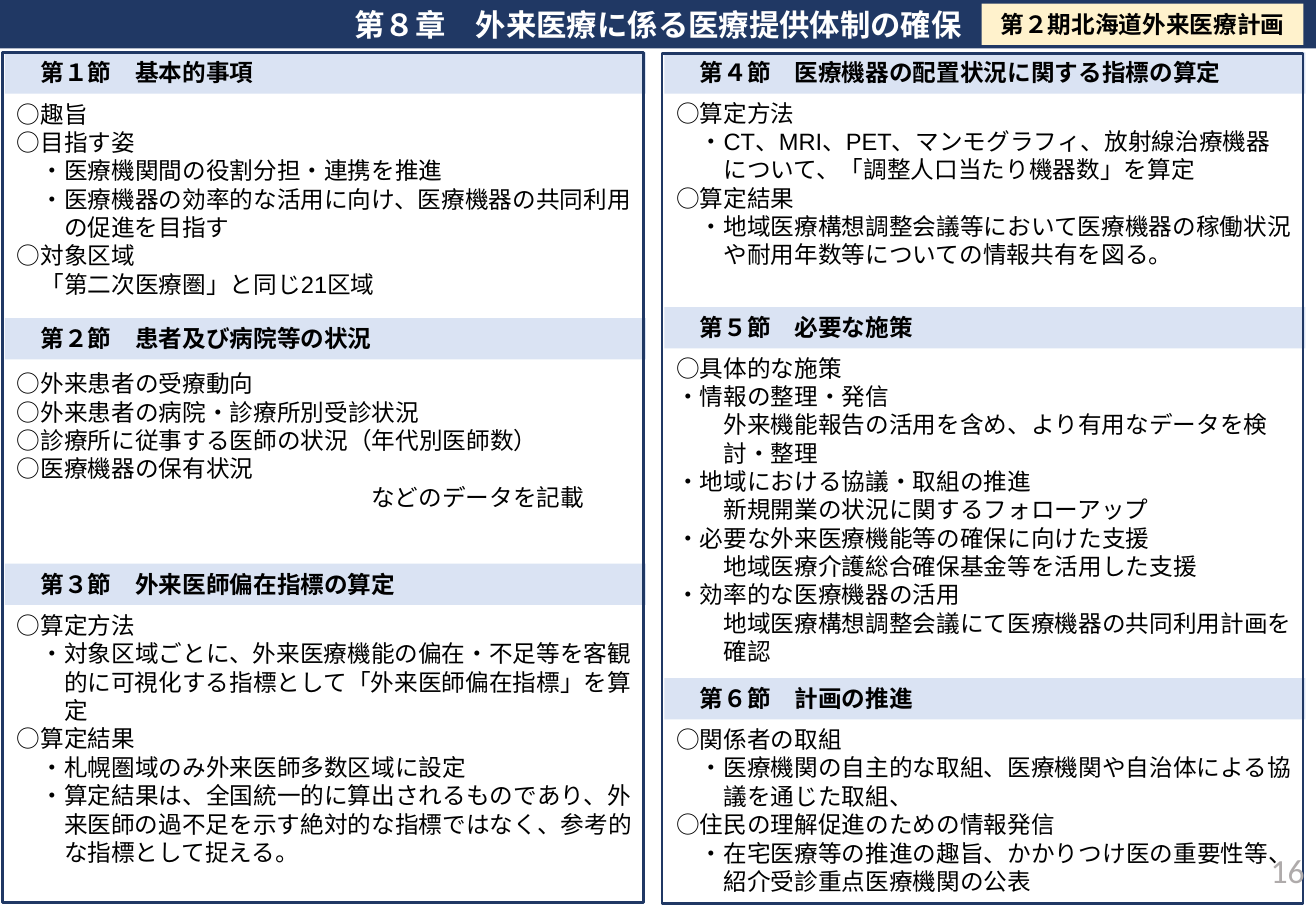
from itertools import groupby

from pptx import Presentation
from pptx.dml.color import RGBColor
from pptx.enum.shapes import MSO_SHAPE
from pptx.enum.text import MSO_ANCHOR, PP_ALIGN
from pptx.util import Pt

NAVY = RGBColor(0x20, 0x38, 0x64)
PALE_BLUE = RGBColor(0xDA, 0xE3, 0xF3)
CREAM = RGBColor(0xFF, 0xF2, 0xCC)
GRAY = RGBColor(0xAF, 0xAB, 0xAB)
BLACK = RGBColor(0, 0, 0)
WHITE = RGBColor(0xFF, 0xFF, 0xFF)

EM = 14  # body text size, also one step of indent
LEFT_X, RIGHT_X, COLUMN_W = 2.9, 393.8, 380
HEADER_H = 24.5

# (x, header top, body top, body height, heading, [(indent steps, text)])
SECTIONS = [
    (LEFT_X, 31, 55.4, 126, "第１節　基本的事項", [
        (0, "○趣旨"),
        (0, "○目指す姿"),
        (1, "・医療機関間の役割分担・連携を推進"),
        (1, "・医療機器の効率的な活用に向け、医療機器の共同利用"),
        (2, "の促進を目指す"),
        (0, "○対象区域"),
        (1, "「第二次医療圏」と同じ21区域"),
    ]),
    (LEFT_X, 188.6, 215.3, 108.7, "第２節　患者及び病院等の状況", [
        (0, "○外来患者の受療動向"),
        (0, "○外来患者の病院・診療所別受診状況"),
        (0, "○診療所に従事する医師の状況（年代別医師数）"),
        (0, "○医療機器の保有状況"),
        (15, "などのデータを記載"),
    ]),
    (LEFT_X, 334.1, 358.6, 177, "第３節　外来医師偏在指標の算定", [
        (0, "○算定方法"),
        (1, "・対象区域ごとに、外来医療機能の偏在・不足等を客観"),
        (2, "的に可視化する指標として「外来医師偏在指標」を算"),
        (2, "定"),
        (0, "○算定結果"),
        (1, "・札幌圏域のみ外来医師多数区域に設定"),
        (1, "・算定結果は、全国統一的に算出されるものであり、外"),
        (2, "来医師の過不足を示す絶対的な指標ではなく、参考的"),
        (2, "な指標として捉える。"),
    ]),
    (RIGHT_X, 31, 54.9, 124, "第４節　医療機器の配置状況に関する指標の算定", [
        (0, "○算定方法"),
        (1, "・CT、MRI、PET、マンモグラフィ、放射線治療機器"),
        (2, "について、「調整人口当たり機器数」を算定"),
        (0, "○算定結果"),
        (1, "・地域医療構想調整会議等において医療機器の稼働状況"),
        (2, "や耐用年数等についての情報共有を図る。"),
    ]),
    (RIGHT_X, 182, 206, 193.7, "第５節　必要な施策", [
        (0, "○具体的な施策"),
        (0, "・情報の整理・発信"),
        (2, "外来機能報告の活用を含め、より有用なデータを検"),
        (2, "討・整理"),
        (0, "・地域における協議・取組の推進"),
        (2, "新規開業の状況に関するフォローアップ"),
        (0, "・必要な外来医療機能等の確保に向けた支援"),
        (2, "地域医療介護総合確保基金等を活用した支援"),
        (0, "・効率的な医療機器の活用"),
        (2, "地域医療構想調整会議にて医療機器の共同利用計画を"),
        (2, "確認"),
    ]),
    (RIGHT_X, 402, 426.2, 108.7, "第６節　計画の推進", [
        (0, "○関係者の取組"),
        (1, "・医療機関の自主的な取組、医療機関や自治体による協"),
        (2, "議を通じた取組、"),
        (0, "○住民の理解促進のための情報発信"),
        (1, "・在宅医療等の推進の趣旨、かかりつけ医の重要性等、"),
        (2, "紹介受診重点医療機関の公表"),
    ]),
]


def write(p, text, size=EM, color=BLACK, bold=False, align=PP_ALIGN.LEFT,
          indent=0, latin="Calibri"):
    """Fill a paragraph; ASCII stretches take the latin font."""
    p.alignment = align
    if indent:
        p._p.get_or_add_pPr().set("marL", str(Pt(indent * EM)))
    for is_ascii, chars in groupby(text, str.isascii):
        r = p.add_run()
        r.text = "".join(chars)
        r.font.name = latin if is_ascii else "Calibri"
        r.font.size = Pt(size)
        r.font.bold = bold
        r.font.color.rgb = color


class Deck:
    def __init__(self, width, height):
        self.prs = Presentation()
        self.prs.slide_width, self.prs.slide_height = Pt(width), Pt(height)
        self.s = self.prs.slides.add_slide(self.prs.slide_layouts[6])

    def rect(self, x, y, w, h, fill=None, line=None):
        sp = self.s.shapes.add_shape(MSO_SHAPE.RECTANGLE, Pt(x), Pt(y), Pt(w), Pt(h))
        sp.shadow.inherit = False
        if fill is None:
            sp.fill.background()
        else:
            sp.fill.solid()
            sp.fill.fore_color.rgb = fill
        if line is None:
            sp.line.fill.background()
        else:
            sp.line.color.rgb = line
            sp.line.width = Pt(1.5)
        return sp

    def band(self, x, y, w, h, fill, text, **fmt):
        tf = self.rect(x, y, w, h, fill).text_frame
        tf.word_wrap = True
        tf.vertical_anchor = MSO_ANCHOR.TOP
        tf.margin_top = tf.margin_bottom = Pt(3.6)
        write(tf.paragraphs[0], text, bold=True, **fmt)

    def text(self, x, y, w, h, lines, anchor=MSO_ANCHOR.TOP, **fmt):
        tf = self.s.shapes.add_textbox(Pt(x), Pt(y), Pt(w), Pt(h)).text_frame
        tf.word_wrap = True
        tf.vertical_anchor = anchor
        for i, (indent, line) in enumerate(lines):
            p = tf.add_paragraph() if i else tf.paragraphs[0]
            write(p, line, indent=indent, **fmt)


def main():
    deck = Deck(780, 540)
    deck.band(0, 0, 780, 28.8, NAVY, "第８章　外来医療に係る医療提供体制の確保",
              size=18, color=WHITE, align=PP_ALIGN.CENTER)
    for x, header_y, body_y, body_h, heading, lines in SECTIONS:
        deck.band(x, header_y, COLUMN_W, HEADER_H, PALE_BLUE, heading, indent=1)
        deck.text(x, body_y, COLUMN_W, body_h, lines, latin="Arial")
    for x, y in ((LEFT_X, 31), (RIGHT_X, 31.7)):
        deck.rect(x - 1.4, y, COLUMN_W, 504, line=NAVY)
    deck.band(581.8, 2.2, 190.8, HEADER_H, CREAM, "第２期北海道外来医療計画",
              align=PP_ALIGN.CENTER)
    deck.text(604.8, 501.1, 175.7, 28.8, [(0, "16")], MSO_ANCHOR.MIDDLE,
              size=20, color=GRAY, align=PP_ALIGN.RIGHT)
    deck.prs.save("out.pptx")


if __name__ == "__main__":
    main()
